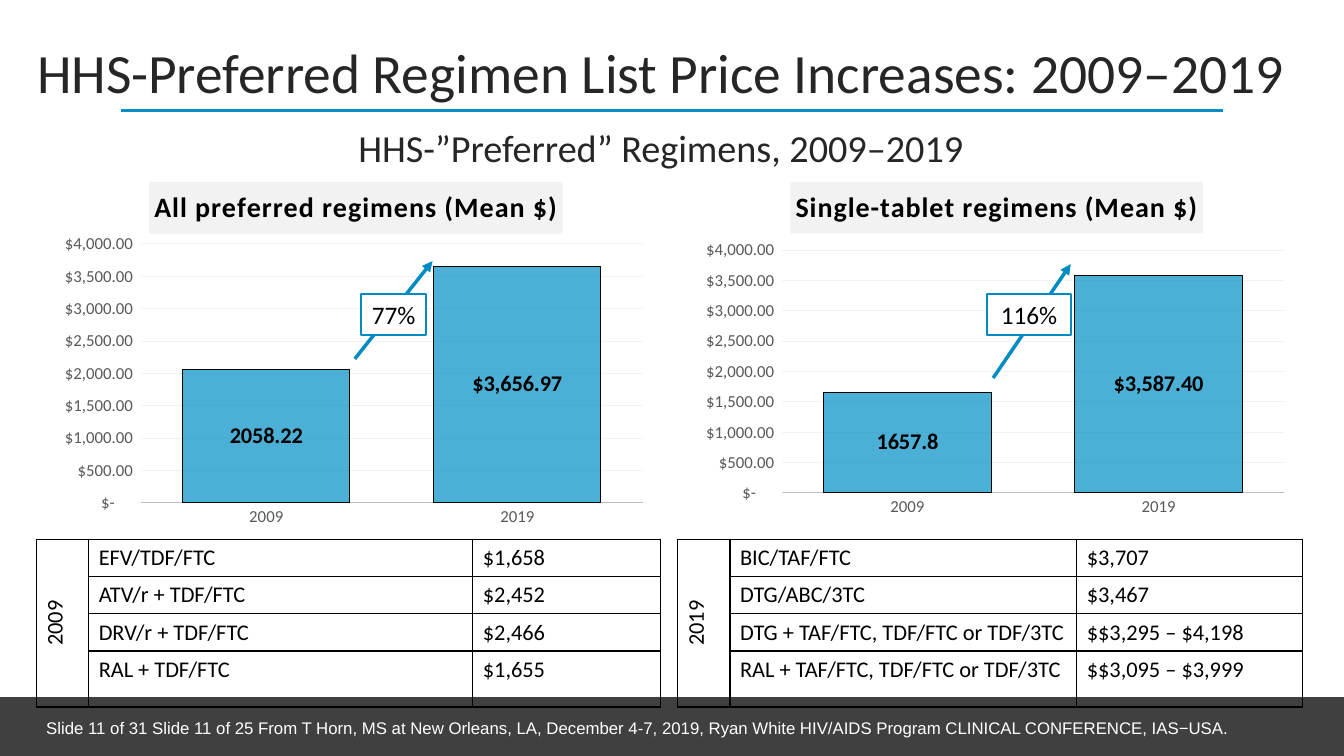
import pptx
import pptx.util
import pptx.chart.data
import pptx.dml.color
import pptx.enum.chart
import pptx.enum.shapes
import pptx.enum.text
import pptx.oxml
import pptx.oxml.ns
from lxml import etree

Inches, Pt = pptx.util.Inches, pptx.util.Pt
RGB = pptx.dml.color.RGBColor
qn = pptx.oxml.ns.qn
CENTER = pptx.enum.text.PP_ALIGN.CENTER
MIDDLE = pptx.enum.text.MSO_ANCHOR.MIDDLE
RECTANGLE = pptx.enum.shapes.MSO_SHAPE.RECTANGLE

BLACK, WHITE = RGB(0, 0, 0), RGB(255, 255, 255)
INK, FOOTER_GREY = RGB(0x26, 0x26, 0x26), RGB(0x40, 0x40, 0x40)
BLUE, ARROW_BLUE = RGB(0x00, 0x8F, 0xC5), RGB(0x00, 0x8B, 0xC3)
AXIS_TEXT, AXIS_LINE = RGB(0x59, 0x59, 0x59), RGB(0xBF, 0xBF, 0xBF)
PALE = RGB(0xF2, 0xF2, 0xF2)

WIDTH, HEIGHT = 13.33, 7.5
ROW = 0.37
DOLLARS = '_("$"* #,##0.00_);_("$"* \\(#,##0.00\\);_("$"* "-"??_);_(@_)'

# Each panel: left, chart height, plot top and height as shares of the chart,
# growth badge left and width, arrow ends (all relative to the panel box)
PANELS = [
    dict(left=0.36, heading="All preferred regimens (Mean $)", means=(2058.22, 3656.97),
         chart_height=3.63, plot=(0.204, 0.708), growth="77%", badge=(3.22, 0.65),
         arrow=(3.16, 1.88, 3.93, 0.91), year="2009", columns=(0.52, 3.81, 1.86),
         prices=[("EFV/TDF/FTC", "$1,658"), ("ATV/r + TDF/FTC", "$2,452"),
                 ("DRV/r + TDF/FTC", "$2,466"), ("RAL + TDF/FTC", "$1,655")]),
    dict(left=6.72, heading="Single-tablet regimens (Mean $)", means=(1657.8, 3587.4),
         chart_height=3.53, plot=(0.227, 0.683), growth="116%", badge=(3.07, 0.83),
         arrow=(3.13, 2.07, 3.9, 0.94), year="2019", columns=(0.52, 3.44, 2.24),
         prices=[("BIC/TAF/FTC", "$3,707"), ("DTG/ABC/3TC", "$3,467"),
                 ("DTG + TAF/FTC, TDF/FTC or TDF/3TC", "$$3,295 – $4,198"),
                 ("RAL + TAF/FTC, TDF/FTC or TDF/3TC", "$$3,095 – $3,999")]),
]


def style(font, size, color, bold=False, name="Calibri"):
    font.size, font.bold, font.name = Pt(size), bold, name
    font.color.rgb = color


def write(frame, text, size, color=BLACK, align=None, anchor=None, spacing=None,
          bold=False, name="Calibri", wrap=True):
    if wrap is not None:
        frame.word_wrap = wrap
    if anchor is not None:
        frame.vertical_anchor = anchor
    line = frame.paragraphs[0]
    line.alignment, line.line_spacing = align, spacing
    run = line.add_run()
    run.text = text
    style(run.font, size, color, bold, name)
    return run


def add_rectangle(slide, box, fill, line, weight):
    block = slide.shapes.add_shape(RECTANGLE, *map(Inches, box))
    block.shadow.inherit = False
    block.fill.solid()
    block.fill.fore_color.rgb = fill
    block.line.color.rgb = line
    block.line.width = Pt(weight)
    return block


def add_line(slide, ends, color, weight, arrow=False):
    stroke = slide.shapes.add_connector(
        pptx.enum.shapes.MSO_CONNECTOR.STRAIGHT, *map(Inches, ends))
    stroke.line.color.rgb = color
    stroke.line.width = Pt(weight)
    if arrow:
        etree.SubElement(stroke.line._get_or_add_ln(), qn("a:tailEnd"), type="triangle")
    etree.SubElement(stroke._element.spPr, qn("a:effectLst"))


def place(element, x, y, width=None, height=None):
    """Set a manual layout, in shares of the chart, on a title or plot area."""
    old = element.find(qn("c:layout"))
    if old is not None:
        element.remove(old)
    layout = etree.Element(qn("c:layout"))
    manual = etree.SubElement(layout, qn("c:manualLayout"))
    settings = [("xMode", "edge"), ("yMode", "edge"), ("x", x), ("y", y)]
    if width:
        settings = [("layoutTarget", "inner")] + settings + [("w", width), ("h", height)]
    for tag, value in settings:
        etree.SubElement(manual, qn("c:" + tag), val=str(value))
    text = element.find(qn("c:tx"))
    element.insert(0 if text is None else 1, layout)


def add_price_chart(slide, box, panel):
    data = pptx.chart.data.CategoryChartData(number_format=DOLLARS)
    data.categories = ["2009", "2019"]
    data.add_series("Series 1", panel["means"])
    chart = slide.shapes.add_chart(pptx.enum.chart.XL_CHART_TYPE.COLUMN_STACKED,
                                   *map(Inches, box), data).chart
    style(chart.font, 10, BLACK)
    chart.has_legend = False

    # Heading on its pale band
    heading = write(chart.chart_title.text_frame, panel["heading"], 20, bold=True, wrap=None)
    heading._r.get_or_add_rPr().set("spc", "60")
    chart.chart_title.format.fill.solid()
    chart.chart_title.format.fill.fore_color.rgb = PALE
    chart.chart_title.include_in_layout = False
    place(chart.chart_title._element, 0.165, 0.035)
    plot_top, plot_height = panel["plot"]
    place(chart._chartSpace.chart.plotArea, 0.151, plot_top, 0.83, plot_height)

    # Axes
    for axis in (chart.category_axis, chart.value_axis):
        axis.major_tick_mark = pptx.enum.chart.XL_TICK_MARK.NONE
        style(axis.tick_labels.font, 12, AXIS_TEXT)
    chart.category_axis.format.line.color.rgb = AXIS_LINE
    chart.category_axis.format.line.width = Pt(0.75)
    prices = chart.value_axis
    prices.minimum_scale, prices.maximum_scale, prices.major_unit = 0, 4000, 500
    prices.format.line.fill.background()
    prices.major_gridlines.format.line.color.rgb = PALE
    prices.major_gridlines.format.line.width = Pt(0.75)
    prices.tick_labels.number_format = DOLLARS
    prices.tick_labels.number_format_is_linked = False

    # Columns and their labels
    plot = chart.plots[0]
    plot.vary_by_categories = False
    plot.gap_width, plot.overlap = 50, 100
    means = plot.series[0]
    means.format.fill.solid()
    means.format.fill.fore_color.rgb = BLUE
    tint = next(means._element.iter(qn("a:srgbClr")))
    etree.SubElement(tint, qn("a:alpha"), val="70000")
    means.format.line.color.rgb = BLACK
    means.format.line.width = Pt(0.75)
    labels = means.data_labels
    labels.show_value = True
    labels.position = pptx.enum.chart.XL_LABEL_POSITION.CENTER
    style(labels.font, 16, BLACK, bold=True)
    first = means.points[0].data_label
    write(first.text_frame, str(panel["means"][0]), 16, bold=True, wrap=None)
    first.position = pptx.enum.chart.XL_LABEL_POSITION.CENTER


def draw_borders(cell):
    properties = cell._tc.get_or_add_tcPr()
    for position, side in enumerate(("lnL", "lnR", "lnT", "lnB")):
        border = etree.Element(qn("a:" + side), w=str(Pt(1)))
        fill = etree.SubElement(border, qn("a:solidFill"))
        etree.SubElement(fill, qn("a:srgbClr"), val=str(BLACK))
        properties.insert(position, border)


def add_price_table(slide, left, top, panel):
    prices, columns = panel["prices"], panel["columns"]
    table = slide.shapes.add_table(len(prices), len(columns), Inches(left), Inches(top),
                                   Inches(sum(columns)), Inches(ROW * len(prices))).table
    table.first_row = table.horz_banding = False
    for column, width in zip(table.columns, columns):
        column.width = Inches(width)
    for row in table.rows:
        row.height = Inches(ROW)
    table.rows[len(prices) - 1].height = Inches(1.5 * ROW)
    for cell in table.iter_cells():
        cell.fill.background()
        draw_borders(cell)
    year = table.cell(0, 0)
    year.merge(table.cell(len(prices) - 1, 0))
    write(year.text_frame, panel["year"], 16, align=CENTER, wrap=None)
    year._tc.get_or_add_tcPr().set("vert", "vert270")
    for row, entry in enumerate(prices):
        for column, text in enumerate(entry, 1):
            write(table.cell(row, column).text_frame, text, 16, wrap=None)


def add_panel(slide, left, top, panel):
    add_price_chart(slide, (left + 0.13, top, 6, panel["chart_height"]), panel)
    add_price_table(slide, left, top + 3.67, panel)
    # Growth arrow and its badge
    x1, y1, x2, y2 = panel["arrow"]
    add_line(slide, (left + x1, top + y1, left + x2, top + y2), ARROW_BLUE, 2.5, arrow=True)
    offset, width = panel["badge"]
    badge = add_rectangle(slide, (left + offset, top + 1.24, width, 0.4), WHITE, ARROW_BLUE, 1.5)
    write(badge.text_frame, panel["growth"], 18, align=CENTER, anchor=MIDDLE)


def add_header(slide, box):
    left, top, width, height = box
    add_line(slide, (0.09 * WIDTH, top + height, 0.91 * WIDTH, top + height), BLUE, 2.25)
    title = slide.shapes.title
    title.left, title.top, title.width, title.height = map(Inches, box)
    write(title.text_frame, "HHS-Preferred Regimen List Price Increases: 2009–2019", 39.6,
          INK, CENTER, MIDDLE, 0.9)
    subtitle = slide.shapes.add_textbox(*map(Inches, (left, top + 0.74, width, height)))
    write(subtitle.text_frame, "HHS-”Preferred” Regimens, 2009–2019", 27.3,
          INK, CENTER, MIDDLE, 0.9)


def add_footer(slide, box):
    left, top, width, height = box
    add_rectangle(slide, box, FOOTER_GREY, FOOTER_GREY, 1)
    credit = slide.shapes.add_textbox(*map(Inches, (left + 0.36, top + 0.15, 12.1, 0.3)))
    write(credit.text_frame, "Slide 11 of 31 Slide 11 of 25 From T Horn, MS at New Orleans, LA, "
          "December 4-7, 2019, Ryan White HIV/AIDS Program CLINICAL CONFERENCE, IAS−USA.",
          12, WHITE, name="Arial")


def main():
    deck = pptx.Presentation()
    deck.slide_width, deck.slide_height = Inches(WIDTH), Inches(HEIGHT)
    slide = deck.slides.add_slide(deck.slide_layouts[5])
    add_footer(slide, (0, HEIGHT - 0.58, WIDTH, 0.58))
    for panel in PANELS:
        add_panel(slide, panel["left"], 1.68, panel)
    add_header(slide, (0, 0.4, 13.11, 0.7))
    deck.save("out.pptx")


if __name__ == "__main__":
    main()
